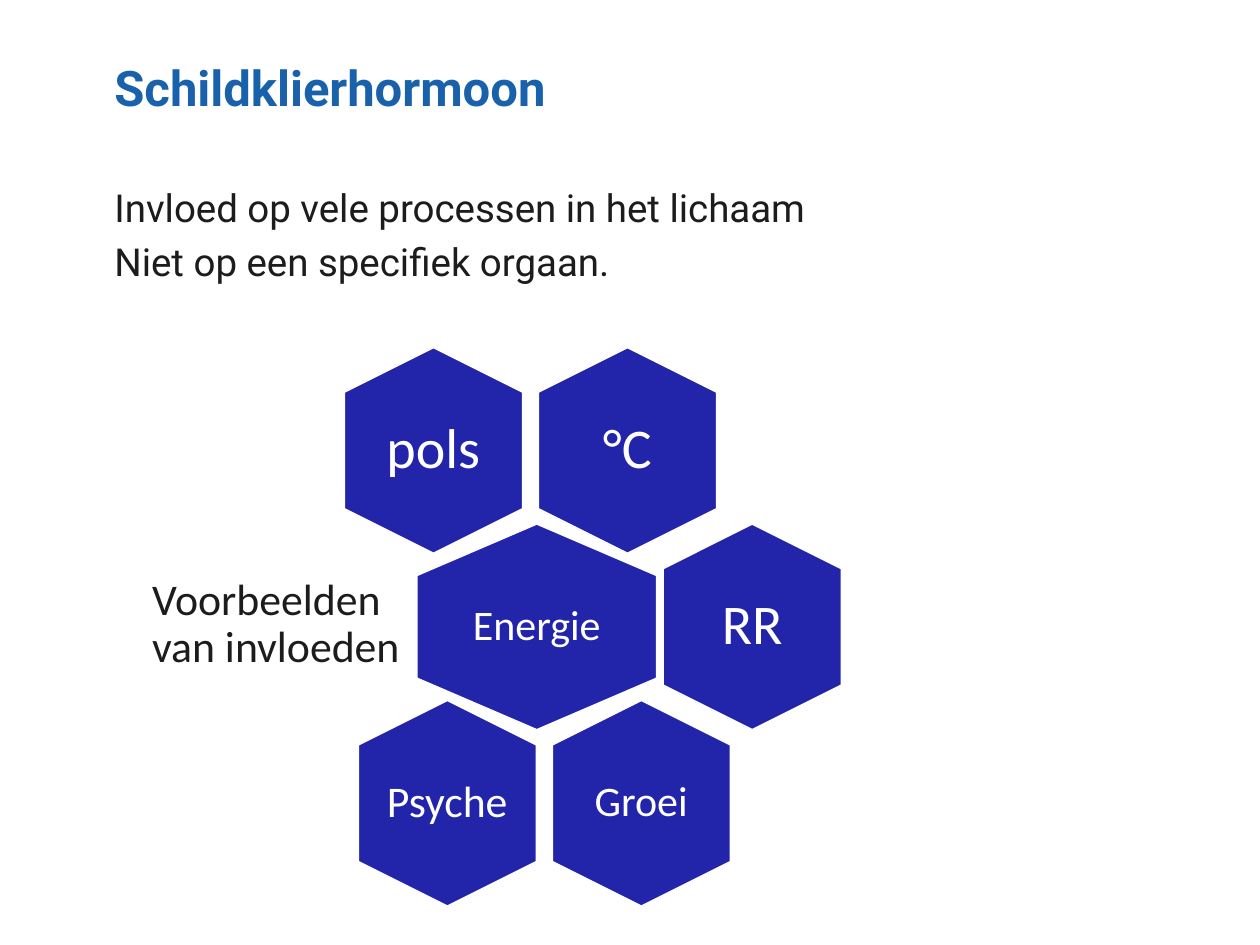
from dataclasses import dataclass

from pptx import Presentation
from pptx.dml.color import RGBColor
from pptx.enum.shapes import MSO_SHAPE
from pptx.enum.text import MSO_ANCHOR, PP_ALIGN
from pptx.util import Inches, Pt

HEXAGON = MSO_SHAPE.HEXAGON
TOP, MIDDLE = MSO_ANCHOR.TOP, MSO_ANCHOR.MIDDLE
LEFT, CENTER = PP_ALIGN.LEFT, PP_ALIGN.CENTER


@dataclass(frozen=True)
class Theme:
    blue: RGBColor = RGBColor(0x19, 0x61, 0xAB)
    cell: RGBColor = RGBColor(0x22, 0x25, 0xA9)
    ink: RGBColor = RGBColor(0x1C, 0x1C, 0x1C)
    white: RGBColor = RGBColor(0xFF, 0xFF, 0xFF)
    head: str = "Roboto"
    body: str = "Calibri"
    title: int = 28
    text: int = 22
    large: int = 32
    label: int = 25
    small: int = 24


THEME = Theme()


def add_text(slide, box, lines, font, size, color, bold=False,
             align=LEFT, anchor=TOP, inset=(0.1, 0.05)):
    """Place a text box and return its paragraphs."""
    frame = slide.shapes.add_textbox(*map(Inches, box)).text_frame
    frame.word_wrap = True
    frame.vertical_anchor = anchor
    frame.margin_left = frame.margin_right = Inches(inset[0])
    frame.margin_top = frame.margin_bottom = Inches(inset[1])
    frame.text = "\n".join(lines)
    for para in frame.paragraphs:
        para.alignment = align
        para.font.name = font
        para.font.size = Pt(size)
        para.font.bold = bold
        para.font.color.rgb = color
    return frame.paragraphs


def add_label(slide, box, text, size, color, align, inset):
    """Place tight, vertically centred text of the diagram."""
    para = add_text(slide, box, [text], THEME.body, size, color,
                    align=align, anchor=MIDDLE, inset=(inset, inset))[0]
    para.line_spacing = 0.9
    para.space_after = Pt(0.35 * size)


def add_cell(slide, mid_x, mid_y, width, text, size):
    """Place an upright hexagon with its text, centred on a point."""
    height = 1.65
    cell = slide.shapes.add_shape(
        HEXAGON, Inches(mid_x - height / 2), Inches(mid_y - width / 2),
        Inches(height), Inches(width))
    cell.rotation = 90
    cell.adjustments[0] = 0.25
    cell.shadow.inherit = False
    cell.fill.solid()
    cell.fill.fore_color.rgb = THEME.cell
    cell.line.color.rgb = THEME.white
    cell.line.width = Pt(2)
    wide, tall = width * 0.69, 1.13
    box = (mid_x - wide / 2, mid_y - tall / 2, wide, tall)
    add_label(slide, box, text, size, THEME.white, CENTER, 0)


def add_comb(slide, box):
    """Place three rows of hexagons and the label beside the middle row."""
    left, top, _, height = box
    slim, broad = 1.43, 1.92
    pitch = 1.4
    first = top + (height - 2 * pitch) / 2
    rows = [
        [(2.33, slim, "pols", THEME.large), (3.87, slim, "°C", THEME.large)],
        [(3.15, broad, "Energie", THEME.small), (4.86, slim, "RR", THEME.large)],
        [(2.44, slim, "Psyche", THEME.label), (3.98, slim, "Groei", THEME.small)],
    ]
    for row, cells in enumerate(rows):
        for mid, width, text, size in cells:
            add_cell(slide, left + mid, first + row * pitch, width, text, size)
    add_label(slide, (left, first + pitch - 0.51, 2.27, 0.99),
              "Voorbeelden van invloeden", THEME.label, THEME.ink, LEFT, 0.1)


def add_intro(slide, box):
    """Place the title and the two lines under it."""
    left, top, width, height = box
    add_text(slide, (left, top, width, 0.89), ["Schildklierhormoon"],
             THEME.head, THEME.title, THEME.blue, bold=True)
    lines = ["Invloed op vele processen in het lichaam",
             "Niet op een specifiek orgaan."]
    paras = add_text(slide, (left, top + 1, width, height - 1), lines,
                     THEME.head, THEME.text, THEME.ink)
    paras[1].space_before = Pt(4.4)


def main():
    deck = Presentation()
    deck.slide_width, deck.slide_height = Inches(10), Inches(7.5)
    slide = deck.slides.add_slide(deck.slide_layouts[6])
    add_intro(slide, (0.81, 0.41, 8.25, 5.63))
    add_comb(slide, (1.11, 2.75, 5.58, 4.45))
    deck.save("out.pptx")


if __name__ == "__main__":
    main()
